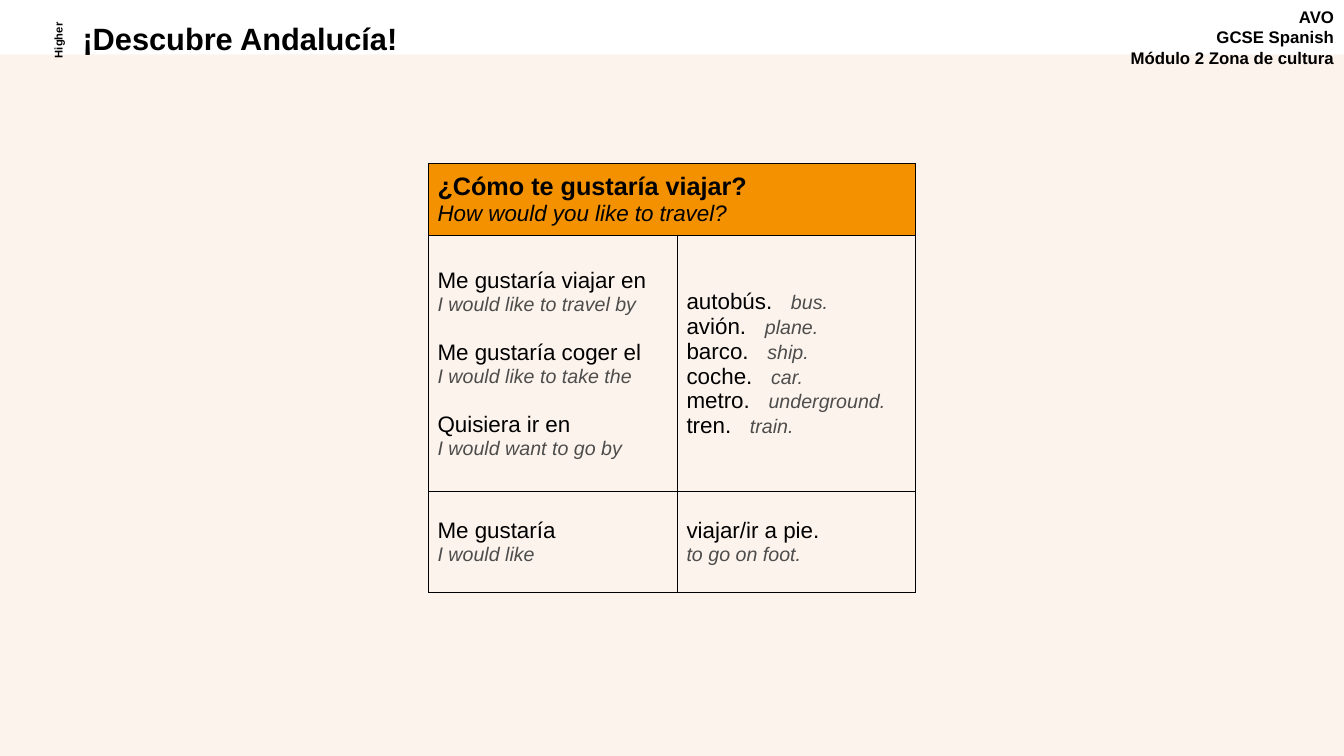
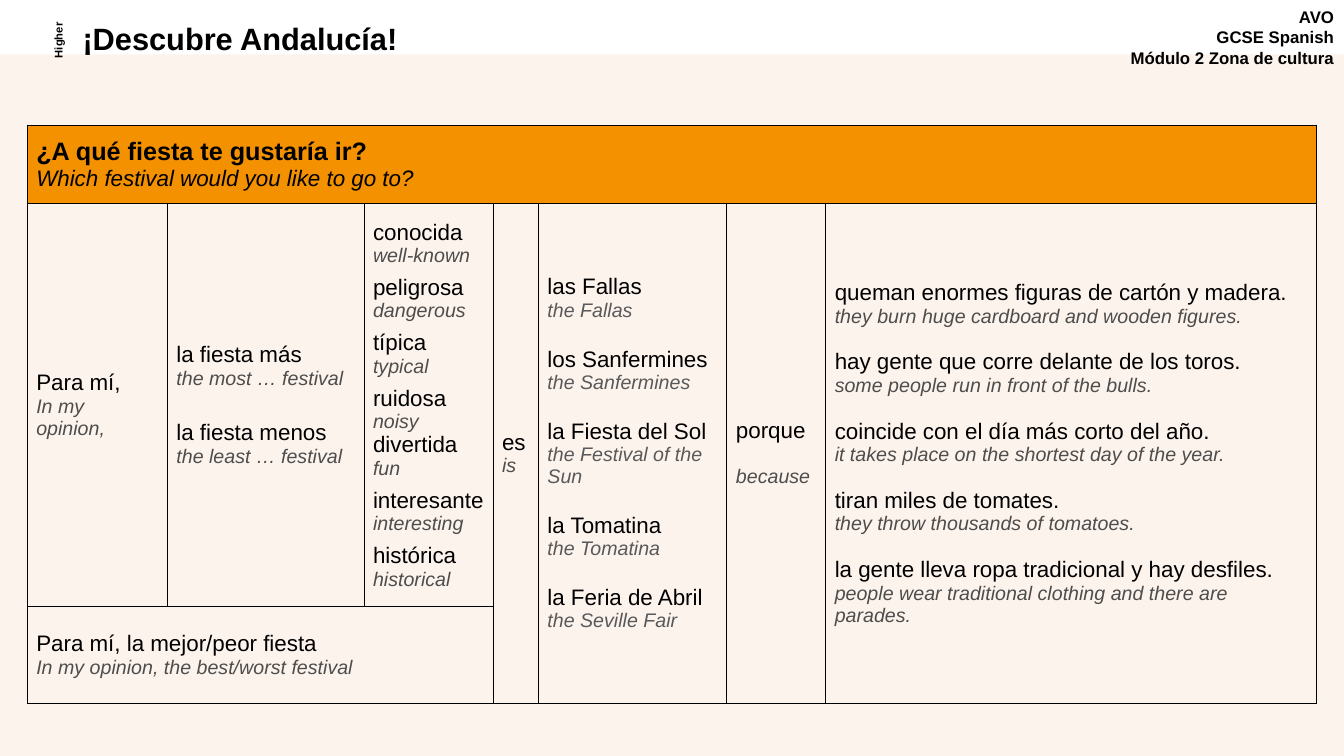
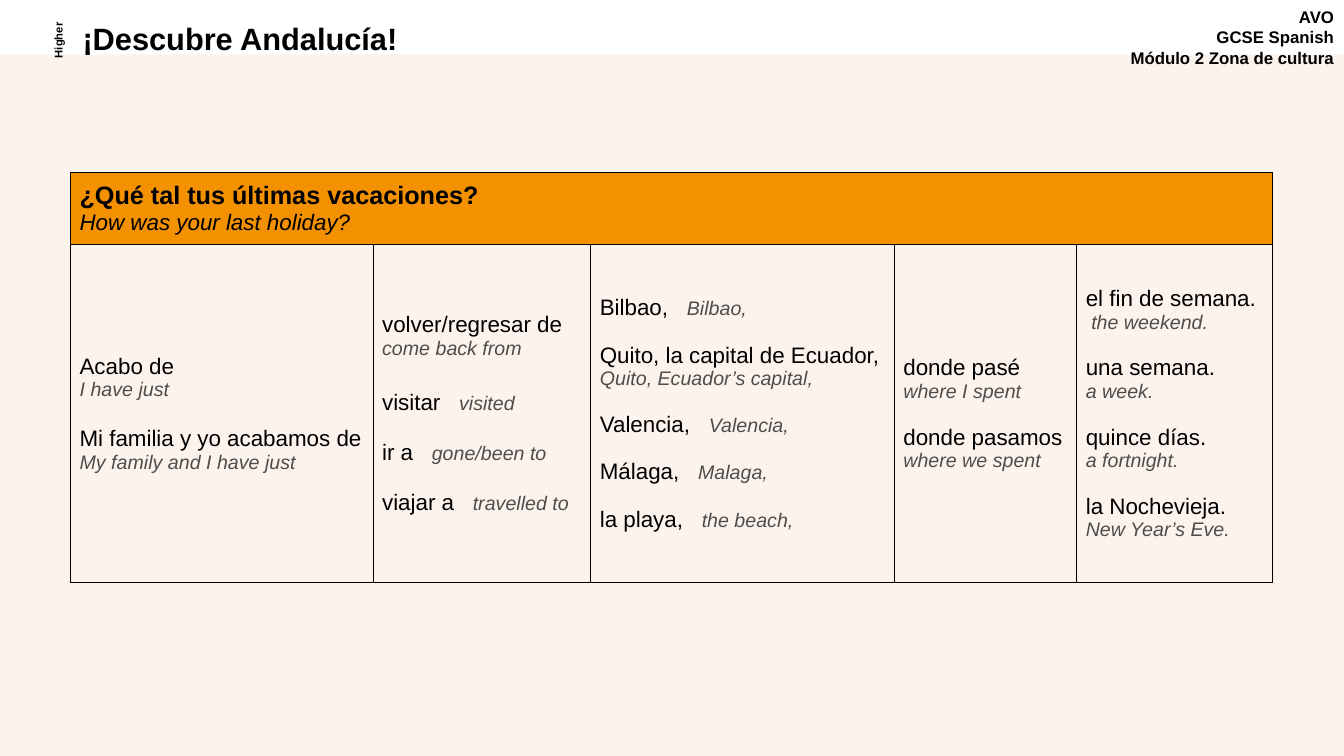
from lxml import etree
from pptx import Presentation
from pptx.dml.color import RGBColor
from pptx.enum.shapes import MSO_SHAPE
from pptx.enum.text import MSO_ANCHOR, PP_ALIGN
from pptx.oxml import parse_xml
from pptx.oxml.ns import nsdecls
from pptx.util import Inches, Pt

COLORS = {
    "ink": "000000",
    "note": "4D4D4C",
    "soft_note": "595959",
    "header": "F39100",
    "panel": "FDF3ED",
}
FONT = "Arial"
TITLE = "¡Descubre Andalucía!"
COURSE = ["AVO", "GCSE Spanish", "Módulo 2 Zona de cultura"]
TIER = "Higher"
BORDER_SIDES = ["lnL", "lnR", "lnT", "lnB"]

# phrase: gap before in points, Spanish, English, optional layout
LESSONS = [
    {
        "question": ("¿Cómo te gustaría viajar?", "How would you like to travel?"),
        "origin": (4.25, 1.62),
        "columns": [2.47, 2.36],
        "rows": [0.72, 2.54, 1],
        "cells": [
            (1, 0, 1, 1, "note", [
                (0, "Me gustaría viajar en", "I would like to travel by"),
                (18, "Me gustaría coger el", "I would like to take the"),
                (18, "Quisiera ir en", "I would want to go by"),
            ]),
            (1, 1, 1, 1, "note", [
                (0, "autobús.", "bus.", "inline"),
                (0, "avión.", "plane.", "inline"),
                (0, "barco.", "ship.", "inline"),
                (0, "coche.", "car.", "inline"),
                (0, "metro.", "underground.", "inline"),
                (0, "tren.", "train.", "inline"),
            ]),
            (2, 0, 1, 1, "note", [(0, "Me gustaría", "I would like")]),
            (2, 1, 1, 1, "note", [(0, "viajar/ir a pie.", "to go on foot.")]),
        ],
    },
    {
        "question": ("¿A qué fiesta te gustaría ir?", "Which festival would you like to go to?"),
        "origin": (0.27, 1.24),
        "columns": [1.39, 1.95, 1.28, 0.45, 1.87, 0.98, 4.87],
        "rows": [0.78, 3.86, 0.96],
        "cells": [
            (1, 0, 1, 1, "note", [(0, "Para mí,", "In my opinion,")]),
            (1, 1, 1, 1, "note", [
                (0, "la fiesta más", "the most … festival"),
                (22, "la fiesta menos", "the least … festival"),
            ]),
            (1, 2, 1, 1, "note", [
                (0, "conocida", "well-known"),
                (6, "peligrosa", "dangerous"),
                (6, "típica", "typical"),
                (6, "ruidosa", "noisy"),
                (0, "divertida", "fun"),
                (6, "interesante", "interesting"),
                (6, "histórica", "historical"),
            ]),
            (1, 3, 2, 1, "note", [(0, "es", "is")]),
            (1, 4, 2, 1, "soft_note", [
                (0, "las Fallas", "the Fallas"),
                (18, "los Sanfermines", "the Sanfermines"),
                (18, "la Fiesta del Sol", "the Festival of the Sun"),
                (18, "la Tomatina", "the Tomatina"),
                (18, "la Feria de Abril", "the Seville Fair"),
            ]),
            (1, 5, 2, 1, "note", [(0, "porque", "because", "apart")]),
            (1, 6, 2, 1, "note", [
                (0, "queman enormes figuras de cartón y madera.",
                 "they burn huge cardboard and wooden figures."),
                (16, "hay gente que corre delante de los toros.",
                 "some people run in front of the bulls."),
                (16, "coincide con el día más corto del año.",
                 "it takes place on the shortest day of the year."),
                (16, "tiran miles de tomates.", "they throw thousands of tomatoes."),
                (16, "la gente lleva ropa tradicional y hay desfiles.",
                 "people wear traditional clothing and there are parades."),
            ]),
            (2, 0, 1, 3, "note", [
                (0, "Para mí, la mejor/peor fiesta", "In my opinion, the best/worst festival"),
            ]),
        ],
    },
    {
        "question": ("¿Qué tal tus últimas vacaciones?", "How was your last holiday?"),
        "origin": (0.7, 1.71),
        "columns": [3, 2.16, 3.01, 1.81, 1.94],
        "rows": [0.72, 3.35],
        "cells": [
            (1, 0, 1, 1, "note", [
                (0, "Acabo de", "I have just"),
                (18, "Mi familia y yo acabamos de", "My family and I have just"),
            ]),
            (1, 1, 1, 1, "note", [
                (0, "volver/regresar de", "come back from"),
                (22, "visitar", "visited", "inline"),
                (18, "ir a", "gone/been to", "inline"),
                (18, "viajar a", "travelled to", "inline"),
            ]),
            (1, 2, 1, 1, "note", [
                (0, "Bilbao,", "Bilbao,", "inline"),
                (16, "Quito, la capital de Ecuador,", "Quito, Ecuador’s capital,"),
                (16, "Valencia,", "Valencia,", "inline"),
                (16, "Málaga,", "Malaga,", "inline"),
                (16, "la playa,", "the beach,", "inline"),
            ]),
            (1, 3, 1, 1, "note", [
                (0, "donde pasé", "where I spent"),
                (16, "donde pasamos", "where we spent"),
            ]),
            (1, 4, 1, 1, "note", [
                (0, "el fin de semana.", " the weekend."),
                (16, "una semana.", "a week."),
                (16, "quince días.", "a fortnight."),
                (16, "la Nochevieja.", "New Year’s Eve."),
            ]),
        ],
    },
]


def write(frame, text, size=16, color="ink", bold=False, italic=False,
          align=PP_ALIGN.LEFT, before=0, spacing=None, inline=False, tracking=None):
    paragraph = frame.paragraphs[-1]
    if paragraph.runs and not inline:
        paragraph = frame.add_paragraph()
    if not inline:
        paragraph.alignment = align
        paragraph.space_before = Pt(before)
        if spacing:
            paragraph.line_spacing = spacing
    run = paragraph.add_run()
    run.text = text
    run.font.name = FONT
    run.font.size = Pt(size)
    run.font.bold = bold
    run.font.italic = italic
    run.font.color.rgb = RGBColor.from_string(COLORS[color])
    if tracking:
        run._r.get_or_add_rPr().set("spc", str(tracking))


def add_frame(slide, left, top, width, height, rotation=0):
    box = slide.shapes.add_textbox(Inches(left), Inches(top), Inches(width), Inches(height))
    box.rotation = rotation
    box.text_frame.word_wrap = True
    return box.text_frame


deck = Presentation()
deck.slide_width = Inches(13.33)
deck.slide_height = Inches(7.5)

for lesson in LESSONS:
    slide = deck.slides.add_slide(deck.slide_layouts[6])

    panel = slide.shapes.add_shape(
        MSO_SHAPE.RECTANGLE, Inches(0), Inches(0.54), Inches(13.33), Inches(6.96))
    panel.shadow.inherit = False
    panel.fill.solid()
    panel.fill.fore_color.rgb = RGBColor.from_string(COLORS["panel"])
    panel.line.fill.background()

    course = add_frame(slide, 10.95, 0.02, 2.38, 0.77)
    for line in COURSE:
        write(course, line, size=12, bold=True, align=PP_ALIGN.RIGHT)
    write(add_frame(slide, 0.72, 0.19, 6.88, 0.43), TITLE, size=22, bold=True, spacing=0.9)
    write(add_frame(slide, 0.18, 0.29, 0.78, 0.22, rotation=270), TIER,
          size=8, bold=True, align=PP_ALIGN.CENTER)

    columns, rows = lesson["columns"], lesson["rows"]
    left, top = lesson["origin"]
    grid = slide.shapes.add_table(
        len(rows), len(columns), Inches(left), Inches(top),
        Inches(sum(columns)), Inches(sum(rows))).table
    grid.first_row = False
    grid.horz_banding = False
    for column, width in zip(grid.columns, columns):
        column.width = Inches(width)
    for row, height in zip(grid.rows, rows):
        row.height = Inches(height)

    for cell in grid.iter_cells():
        cell.vertical_anchor = MSO_ANCHOR.MIDDLE
        cell.margin_left = cell.margin_right = Inches(0.09)
        cell.margin_top = cell.margin_bottom = Inches(0.04)
        cell.fill.background()
        properties = cell._tc.get_or_add_tcPr()
        for position, side in enumerate(BORDER_SIDES):
            border = parse_xml(f'<a:{side} {nsdecls("a")} w="9525"/>')
            solid = etree.SubElement(border, border.tag.replace(side, "solidFill"))
            etree.SubElement(solid, border.tag.replace(side, "srgbClr"), val=COLORS["ink"])
            properties.insert(position, border)

    header = grid.cell(0, 0)
    header.merge(grid.cell(0, len(columns) - 1))
    header.fill.solid()
    header.fill.fore_color.rgb = RGBColor.from_string(COLORS["header"])
    question, translation = lesson["question"]
    write(header.text_frame, question, size=18, bold=True)
    write(header.text_frame, translation, italic=True)

    for row, column, row_span, column_span, note_color, phrases in lesson["cells"]:
        cell = grid.cell(row, column)
        if row_span * column_span > 1:
            cell.merge(grid.cell(row + row_span - 1, column + column_span - 1))
        frame = cell.text_frame
        for gap, spanish, english, *layout in phrases:
            inline = "inline" in layout
            write(frame, spanish, before=gap)
            if inline:
                write(frame, " ", inline=True, tracking=890)
            write(frame, english, size=14, color=note_color, italic=True, inline=inline,
                  before=16 if "apart" in layout else 0)

deck.save("out.pptx")
